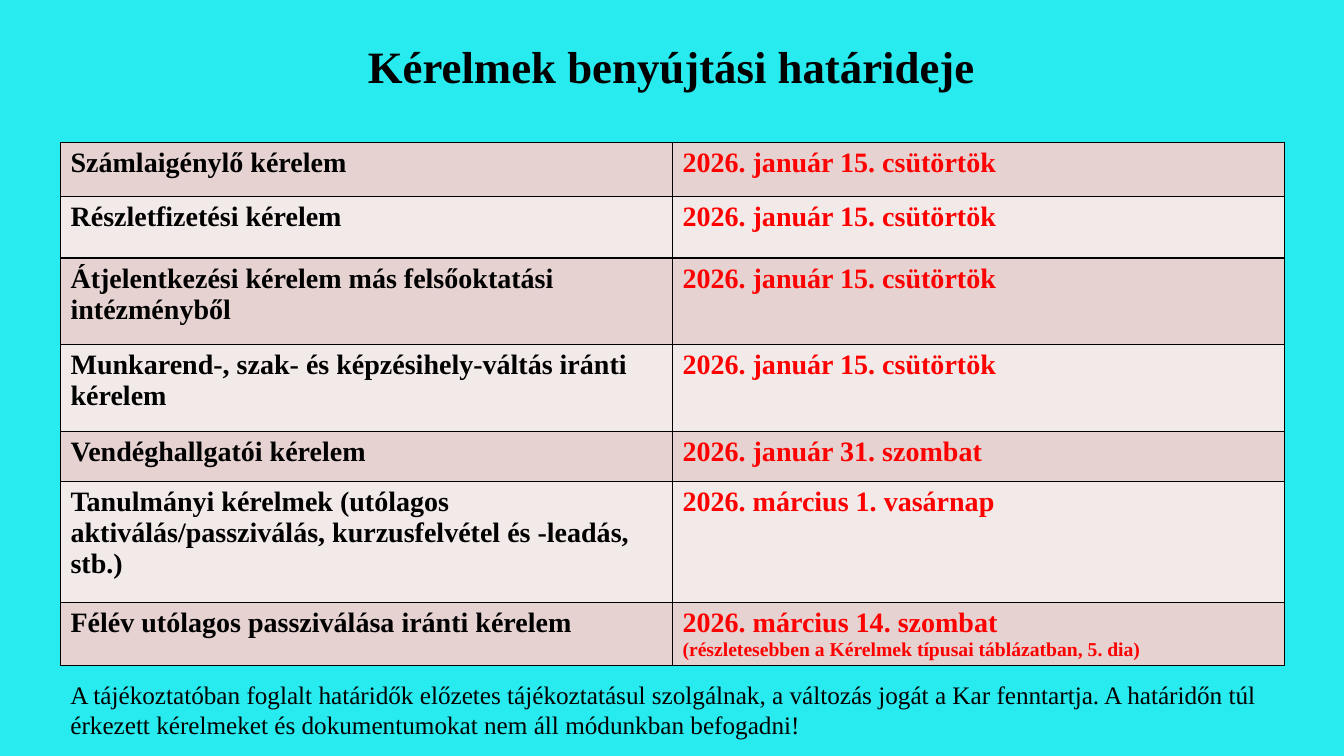
from lxml.etree import SubElement
from pptx import Presentation
from pptx.dml.color import RGBColor
from pptx.enum.text import MSO_ANCHOR, MSO_AUTO_SIZE, PP_ALIGN
from pptx.oxml.ns import qn
from pptx.util import Inches, Pt

COLORS = {
    "background": "28EBF0",
    "text": "000000",
    "deadline": "FF0000",
    "border": "000000",
    "odd_row": "E5D2D1",
    "even_row": "F2EAE9",
}
FONT = "Times New Roman"
LEFT, WIDTH = 0.6, 12.14
JANUARY_DEADLINE = "2026. január 15. csütörtök"

# Row height, request, lines of the deadline
REQUESTS = [
    (0.54, "Számlaigénylő kérelem", [JANUARY_DEADLINE]),
    (0.61, "Részletfizetési kérelem", [JANUARY_DEADLINE]),
    (0.86, "Átjelentkezési kérelem más felsőoktatási intézményből", [JANUARY_DEADLINE]),
    (0.86, "Munkarend-, szak- és képzésihely-váltás iránti kérelem", [JANUARY_DEADLINE]),
    (0.5, "Vendéghallgatói kérelem", ["2026. január 31. szombat"]),
    (1.2, "Tanulmányi kérelmek (utólagos\vaktiválás/passziválás, kurzusfelvétel és -leadás, stb.)",
     ["2026. március 1. vasárnap"]),
    (0.53, "Félév utólagos passziválása iránti kérelem",
     ["2026. március 14. szombat",
      "(részletesebben a Kérelmek típusai táblázatban, 5. dia)"]),
]
NOTICE = (
    "A tájékoztatóban foglalt határidők előzetes tájékoztatásul szolgálnak, "
    "a változás jogát a Kar fenntartja. A határidőn túl érkezett kérelmeket "
    "és dokumentumokat nem áll módunkban befogadni!"
)


def rgb(name):
    return RGBColor.from_string(COLORS[name])


def write(para, text, size, color="text", bold=True):
    para.text = text
    for span in para.runs:
        for key, value in {"name": FONT, "size": Pt(size), "bold": bold}.items():
            setattr(span.font, key, value)
        span.font.color.rgb = rgb(color)


def add_borders(cell):
    """Put a thin line on all four sides; call before the cell is filled."""
    properties = cell._tc.get_or_add_tcPr()
    for side in ("lnL", "lnR", "lnT", "lnB"):
        line = SubElement(properties, qn(f"a:{side}"), w=str(Pt(1)))
        fill = SubElement(line, qn("a:solidFill"))
        SubElement(fill, qn("a:srgbClr"), val=COLORS["border"])


def place_title(page, left, top, width, height):
    title = page.shapes.title
    box = {"left": left, "top": top, "width": width, "height": height}
    for key, value in box.items():
        setattr(title, key, Inches(value))
    title.text_frame.vertical_anchor = MSO_ANCHOR.BOTTOM
    para = title.text_frame.paragraphs[0]
    write(para, "Kérelmek benyújtási határideje", 32)
    para.alignment = PP_ALIGN.CENTER


def add_deadline_table(page, left, top, width):
    height = sum(request[0] for request in REQUESTS)
    table = page.shapes.add_table(
        len(REQUESTS), 2, Inches(left), Inches(top), Inches(width), Inches(height)
    ).table
    for column in table.columns:
        column.width = Inches(width / 2)
    for index, (row_height, request, deadline) in enumerate(REQUESTS):
        row = table.rows[index]
        row.height = Inches(row_height)
        for cell in row.cells:
            add_borders(cell)
            cell.fill.solid()
            cell.fill.fore_color.rgb = rgb("even_row" if index % 2 else "odd_row")
        write(row.cells[0].text_frame.paragraphs[0], request, 20)
        frame = row.cells[1].text_frame
        for number, line in enumerate(deadline):
            para = frame.add_paragraph() if number else frame.paragraphs[0]
            write(para, line, 14 if number else 20, "deadline")


def add_notice(page, left, top, width, height):
    frame = page.shapes.add_textbox(
        Inches(left), Inches(top), Inches(width), Inches(height)
    ).text_frame
    frame.word_wrap = True
    frame.auto_size = MSO_AUTO_SIZE.SHAPE_TO_FIT_TEXT
    write(frame.paragraphs[0], NOTICE, 18, bold=False)


def main():
    deck = Presentation()
    deck.slide_width, deck.slide_height = Inches(13.33), Inches(7.5)
    page = deck.slides.add_slide(deck.slide_layouts.get_by_name("Title Only"))
    page.background.fill.solid()
    page.background.fill.fore_color.rgb = rgb("background")
    add_deadline_table(page, LEFT, 1.41, WIDTH)
    place_title(page, 2.41, 0.16, 8.5, 0.81)
    add_notice(page, LEFT, 6.69, WIDTH, 0.71)
    deck.save("out.pptx")


if __name__ == "__main__":
    main()
